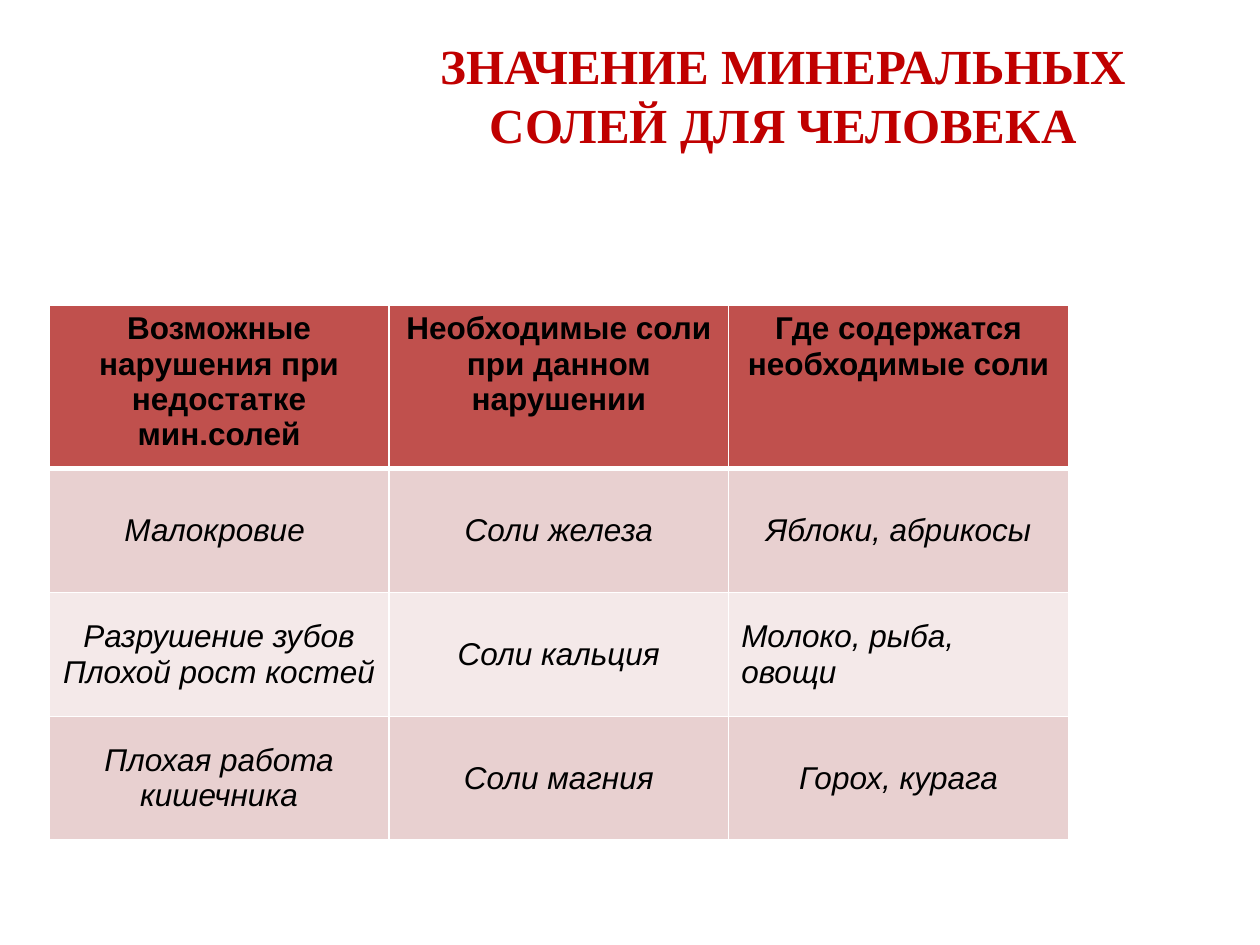
from lxml.etree import SubElement
from pptx import Presentation
from pptx.dml.color import RGBColor
from pptx.enum.text import MSO_ANCHOR as Anchor, MSO_AUTO_SIZE as AutoSize, PP_ALIGN as Align
from pptx.oxml.ns import qn
from pptx.util import Inches, Pt

WHITE = RGBColor(0xFF, 0xFF, 0xFF)
BLACK = RGBColor(0, 0, 0)
TITLE_RED = RGBColor(0xC0, 0, 0)
HEADER_RED = RGBColor(0xC0, 0x50, 0x4D)
ROW_BANDS = [RGBColor(0xE8, 0xD0, 0xD0), RGBColor(0xF4, 0xE9, 0xE9)]

TITLE = "ЗНАЧЕНИЕ МИНЕРАЛЬНЫХ СОЛЕЙ ДЛЯ ЧЕЛОВЕКА"
HEADERS = ["Возможные нарушения при недостатке мин.солей",
           "Необходимые соли при данном нарушении",
           "Где содержатся необходимые соли"]
DEFICIENCIES = [
    ["Малокровие ", "Соли железа", "Яблоки, абрикосы"],
    ["Разрушение зубов\nПлохой рост костей", "Соли кальция", "Молоко, рыба, овощи"],
    ["Плохая работа кишечника", "Соли магния", "Горох, курага"],
]
LEFT_ALIGNED = (2, 2)


def write(frame, text, *, size=18, font="Arial", color=BLACK,
          bold=False, italic=False, align=Align.CENTER):
    frame.text = text
    for paragraph in frame.paragraphs:
        paragraph.alignment = align
        for run in paragraph.runs:
            run.font.size = Pt(size)
            run.font.name = font
            run.font.color.rgb = color
            run.font.bold = bold
            run.font.italic = italic


def add_line(properties, tag, color, points, index):
    """Put an outline or border element at its place in the properties."""
    line = SubElement(properties, qn(tag), w=str(Pt(points)))
    fill = SubElement(line, qn("a:solidFill"))
    SubElement(fill, qn("a:srgbClr"), val=str(color))
    properties.insert(index, line)


def place_title(slide, left, top, width, height):
    title = slide.shapes.title
    title.left, title.top, title.width, title.height = left, top, width, height
    frame = title.text_frame
    frame.word_wrap = True
    frame.auto_size = AutoSize.SHAPE_TO_FIT_TEXT
    frame.vertical_anchor = Anchor.TOP
    write(frame, TITLE, size=28, font="Times New Roman", color=TITLE_RED, bold=True)
    run_properties = frame.paragraphs[0].runs[0].font._element
    add_line(run_properties, "a:ln", BLACK, 0.75, 0)


def format_cell(cell, row, column, text):
    is_header = row == 0
    cell.fill.solid()
    cell.fill.fore_color.rgb = HEADER_RED if is_header else ROW_BANDS[(row - 1) % 2]
    cell.vertical_anchor = Anchor.TOP if is_header else Anchor.MIDDLE
    write(cell.text_frame, text, bold=is_header, italic=not is_header,
          align=Align.LEFT if (row, column) == LEFT_ALIGNED else Align.CENTER)
    borders = {"a:lnL": 1, "a:lnR": 1, "a:lnT": 3 if row == 1 else 1,
               "a:lnB": 3 if is_header else 1}
    for index, (side, points) in enumerate(borders.items()):
        add_line(cell._tc.get_or_add_tcPr(), side, WHITE, points, index)


def place_salts_table(slide, left, top, width, height):
    rows = [HEADERS, *DEFICIENCIES]
    table = slide.shapes.add_table(len(rows), len(HEADERS), left, top, width, height).table
    for row, texts in enumerate(rows):
        for column, text in enumerate(texts):
            format_cell(table.cell(row, column), row, column, text)


def main():
    presentation = Presentation()
    presentation.slide_width, presentation.slide_height = Inches(10), Inches(7.5)
    title_only = presentation.slide_layouts[5]
    slide = presentation.slides.add_slide(title_only)
    place_salts_table(slide, Inches(0.39), Inches(2.42), Inches(8.09), Inches(3.93))
    place_title(slide, Inches(3.05), Inches(0.23), Inches(6.33), Inches(1.35))
    presentation.save("out.pptx")


if __name__ == "__main__":
    main()
